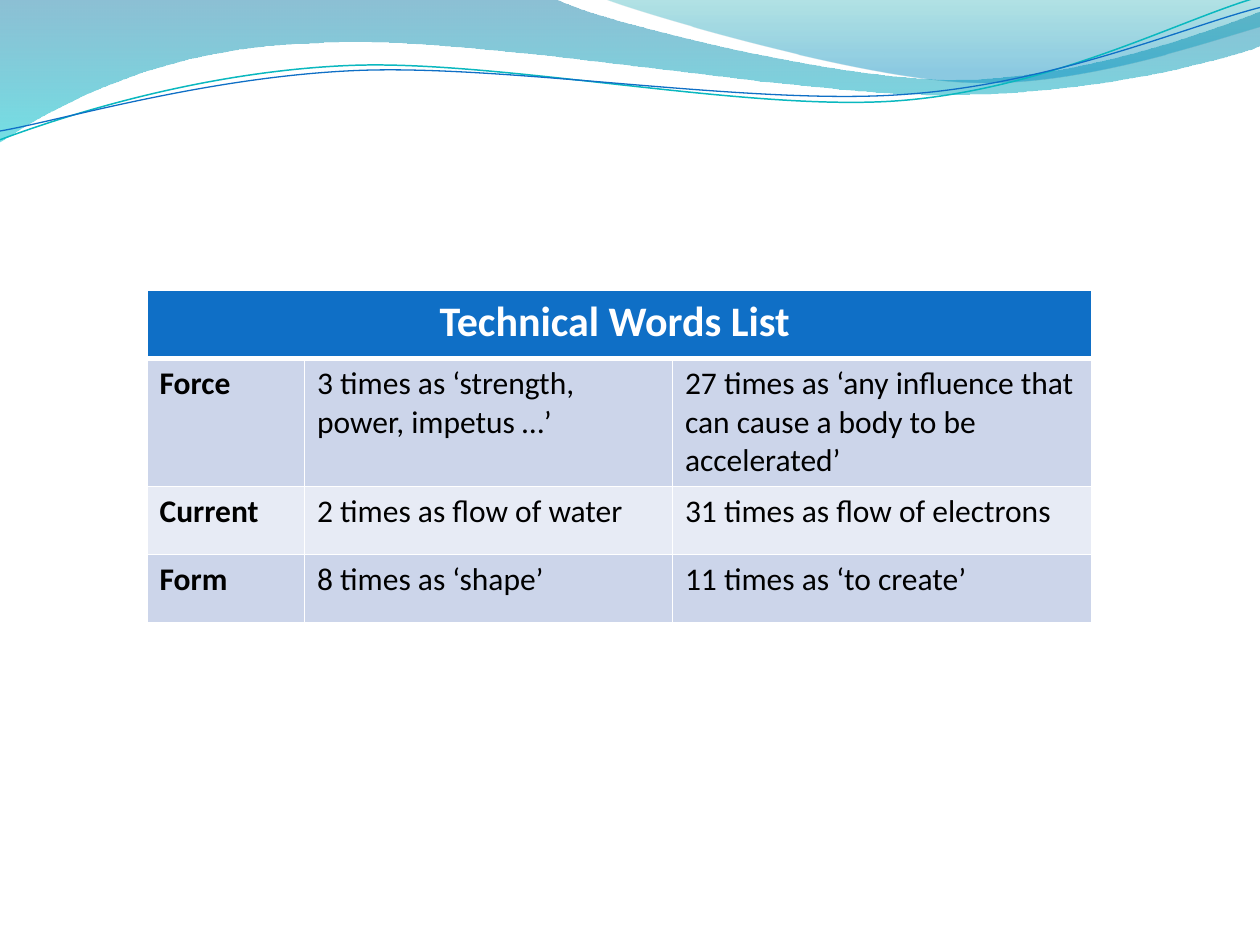
"""Build a slide with a wave banner above a table of technical words."""
from dataclasses import dataclass
from math import cos, radians, sin

from lxml.etree import SubElement
from pptx import Presentation
from pptx.dml.color import RGBColor
from pptx.enum.text import PP_ALIGN
from pptx.oxml.ns import qn
from pptx.util import Inches, Pt

WIDTH, HEIGHT = Inches(10), Inches(7.5)
COLUMN, ROW = WIDTH // 1000, HEIGHT // 750
FONT = "Calibri"
COLORS = {
    "header": "0F6FC6", "odd": "CCD5EA", "even": "E7EBF5",
    "white": "FFFFFF", "black": "000000",
    "sea": "0074A1", "cyan": "00C6CF", "teal": "00A1A9", "sky": "008BBF",
    "teal line": "0AB8BF", "blue line": "0F6FC6",
}
TABLE_LEFT, TABLE_TOP = 116.7, 230.5
COLUMN_WIDTHS = (125, 292, 333)
ROW_HEIGHTS = (54, 69, 54, 54)
HEADING = "Technical Words List "
WORDS = (
    ("Force", "3 times as ‘strength, power, impetus …’",
     "27 times as ‘any influence that can cause a body to be accelerated’"),
    ("Current", "2 times as flow of water", "31 times as flow of electrons"),
    ("Form", "8 times as ‘shape’", "11 times as ‘to create’"),
)


@dataclass(frozen=True)
class Stop:
    color: str
    position: float
    opacity: int


@dataclass(frozen=True)
class Band:
    start: tuple
    segments: tuple
    stops: tuple


@dataclass(frozen=True)
class Ribbon:
    start: tuple
    segments: tuple
    color: str
    weight: float
    center: tuple
    tilt: float = -2.7


BANDS = (
    Band((0, 0), ((440, -1), (476, 17, 664, 63, 758, 63), (853, 63, 958, 26, 1000, 9),
                  (1001, 36), (983, 44, 870, 76, 746, 75), (622, 75, 382, 28, 257, 34),
                  (129, 36, 46, 83, -1, 113)),
         (Stop("sea", 0, 45), Stop("cyan", 1, 55))),
    Band((479, -1), ((509, 11, 682, 62, 769, 65), (856, 69, 961, 32, 1000, 21), (1000, 0)),
         (Stop("teal", 0, 30), Stop("sky", 0.8, 45))),
)
RIBBONS = (
    Ribbon((0, 111), ((48, 93, 158, 57, 277, 52), (395, 47, 593, 89, 713, 80),
                      (833, 71, 938, 15, 998, -2)), "teal line", 0.85, (499, 57.5)),
    Ribbon((0, 104), ((47, 96, 164, 61, 283, 56), (403, 51, 597, 84, 717, 75),
                      (836, 67, 941, 21, 1000, 6)), "blue line", 0.75, (499.5, 59)),
)


def color_of(name: str) -> RGBColor:
    return RGBColor.from_string(COLORS[name])


def turn(point: tuple, center: tuple, degrees: float) -> tuple:
    """Rotate a point clockwise about a center."""
    cosine, sine = cos(radians(degrees)), sin(radians(degrees))
    x, y = point[0] - center[0], point[1] - center[1]
    return center[0] + x * cosine - y * sine, center[1] + x * sine + y * cosine


def bend(shape, segments: tuple) -> None:
    """Join the straight steps of each curved segment into one cubic curve."""
    steps = iter(list(shape._element.spPr.iter(qn("a:lnTo"))))
    for segment in segments:
        group = [next(steps) for _ in range(len(segment) // 2)]
        if len(group) == 3:
            group[0].tag = qn("a:cubicBezTo")
            for step in group[1:]:
                group[0].append(step[0])
                step.getparent().remove(step)


def add_outline(slide, start: tuple, segments: tuple, close: bool,
                center: tuple = (0, 0), degrees: float = 0):
    points = [start] + [segment[i:i + 2] for segment in segments
                        for i in range(0, len(segment), 2)]
    turned = [turn(point, center, degrees) for point in points]
    scaled = [(round(x * COLUMN), round(y * ROW)) for x, y in turned]
    builder = slide.shapes.build_freeform(*scaled[0])
    builder.add_line_segments(scaled[1:], close=close)
    shape = builder.convert_to_shape()
    shape.shadow.inherit = False
    bend(shape, segments)
    return shape


def add_band(slide, band: Band) -> None:
    shape = add_outline(slide, band.start, band.segments, close=True)
    shape.line.fill.background()
    shape.fill.gradient()
    shape.fill.gradient_angle = 270
    for target, stop in zip(shape.fill.gradient_stops, band.stops):
        target.color.rgb = color_of(stop.color)
        target.position = stop.position
    for element, stop in zip(shape._element.spPr.iter(qn("a:srgbClr")), band.stops):
        SubElement(element, qn("a:alpha"), val=str(stop.opacity * 1000))


def add_ribbon(slide, ribbon: Ribbon) -> None:
    shape = add_outline(slide, ribbon.start, ribbon.segments, False,
                        ribbon.center, -ribbon.tilt)
    shape.rotation = ribbon.tilt
    shape.fill.background()
    shape.line.color.rgb = color_of(ribbon.color)
    shape.line.width = Pt(ribbon.weight)
    middle_x, middle_y = (shape.left + shape.width / 2, shape.top + shape.height / 2)
    center = (ribbon.center[0] * COLUMN, ribbon.center[1] * ROW)
    target_x, target_y = turn((middle_x, middle_y), center, ribbon.tilt)
    shape.left += round(target_x - middle_x)
    shape.top += round(target_y - middle_y)


def add_borders(cell, bottom: float, top: float) -> None:
    properties = cell._tc.get_or_add_tcPr()
    for side, weight in (("L", 1), ("R", 1), ("T", top), ("B", bottom)):
        line = SubElement(properties, qn(f"a:ln{side}"), w=str(Pt(weight)))
        fill = SubElement(line, qn("a:solidFill"))
        SubElement(fill, qn("a:srgbClr"), val=COLORS["white"])


def style_cell(cell, row: int, column: int) -> None:
    is_header = row == 0
    add_borders(cell, bottom=3 if is_header else 1, top=3 if row == 1 else 1)
    cell.fill.solid()
    cell.fill.fore_color.rgb = color_of("header" if is_header else ("even", "odd")[row % 2])
    paragraph = cell.text_frame.paragraphs[0]
    if is_header:
        paragraph.alignment = PP_ALIGN.CENTER
    font = paragraph.font
    font.name, font.size = FONT, Pt(24 if is_header else 18)
    font.bold = is_header or column == 0
    font.color.rgb = color_of("white" if is_header else "black")


def add_word_table(slide) -> None:
    table = slide.shapes.add_table(
        len(ROW_HEIGHTS), len(COLUMN_WIDTHS), round(TABLE_LEFT * COLUMN),
        round(TABLE_TOP * ROW), sum(COLUMN_WIDTHS) * COLUMN, sum(ROW_HEIGHTS) * ROW).table
    for column, share in zip(table.columns, COLUMN_WIDTHS):
        column.width = share * COLUMN
    for row, share in zip(table.rows, ROW_HEIGHTS):
        row.height = share * ROW
    table.cell(0, 0).merge(table.cell(0, len(COLUMN_WIDTHS) - 1))
    for row, texts in enumerate(((HEADING,), *WORDS)):
        for column, text in enumerate(texts):
            cell = table.cell(row, column)
            cell.text = text
            style_cell(cell, row, column)


def main() -> None:
    presentation = Presentation()
    presentation.slide_width, presentation.slide_height = WIDTH, HEIGHT
    slide = presentation.slides.add_slide(presentation.slide_layouts[6])
    for band in BANDS:
        add_band(slide, band)
    for ribbon in RIBBONS:
        add_ribbon(slide, ribbon)
    add_word_table(slide)
    presentation.save("out.pptx")


if __name__ == "__main__":
    main()
